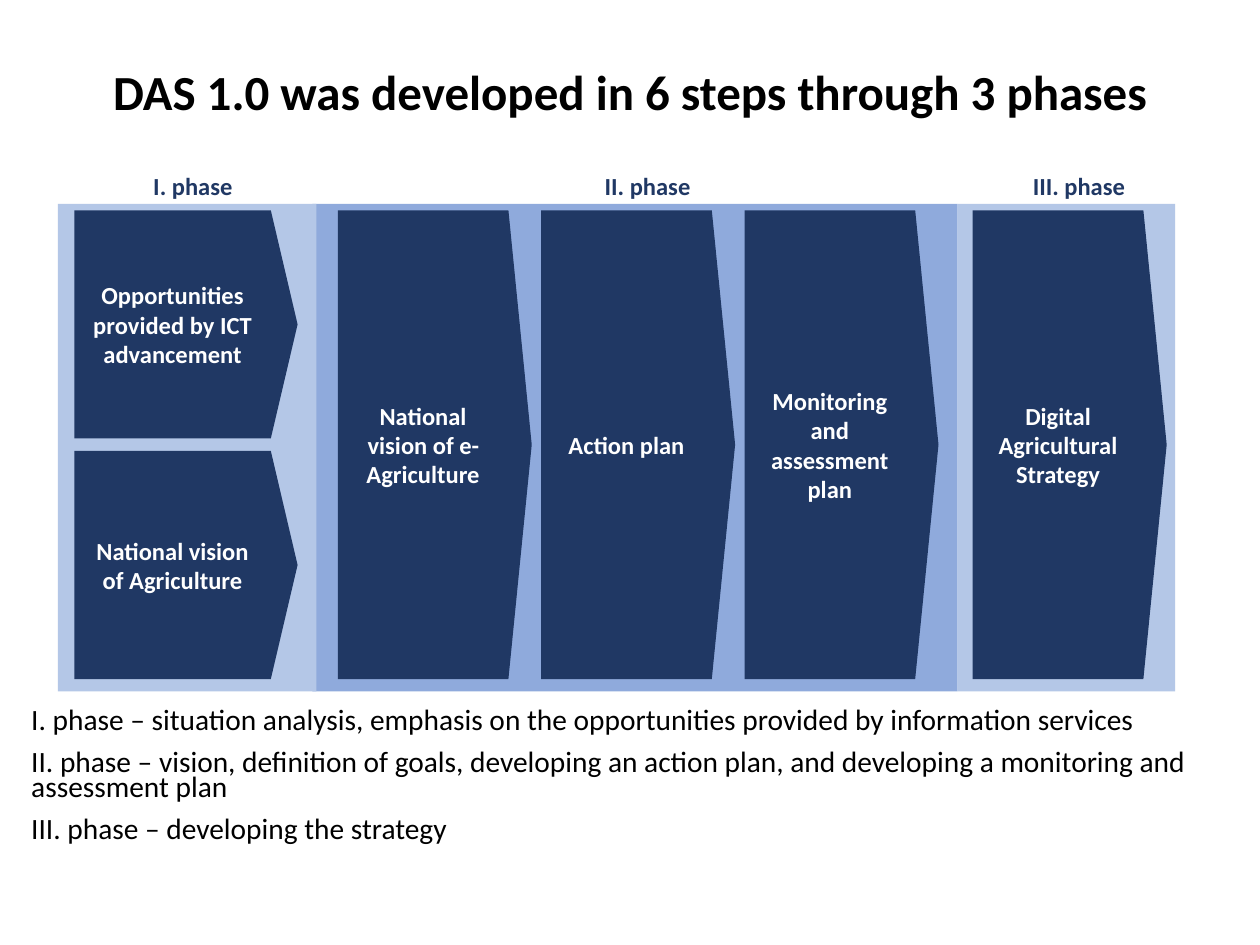
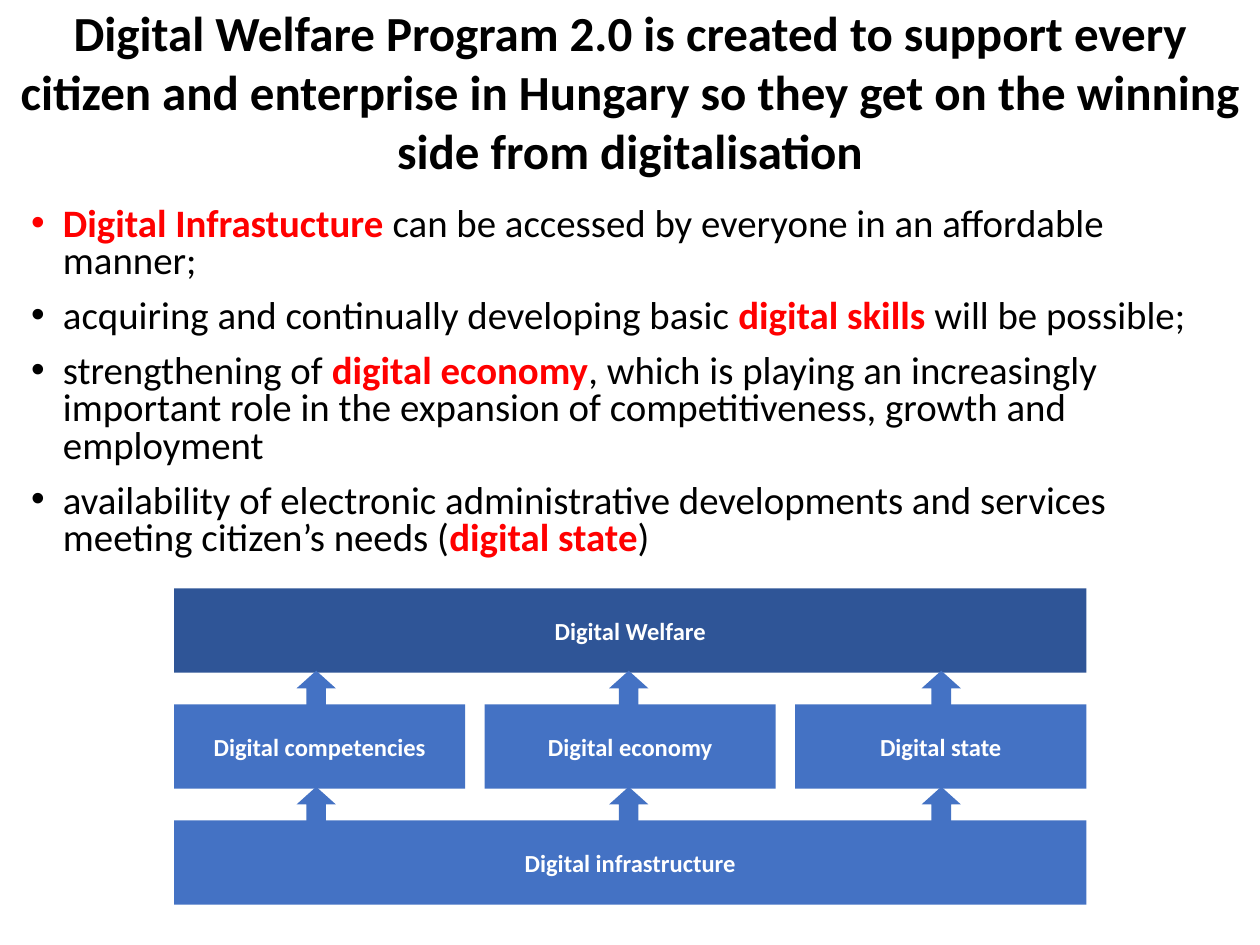
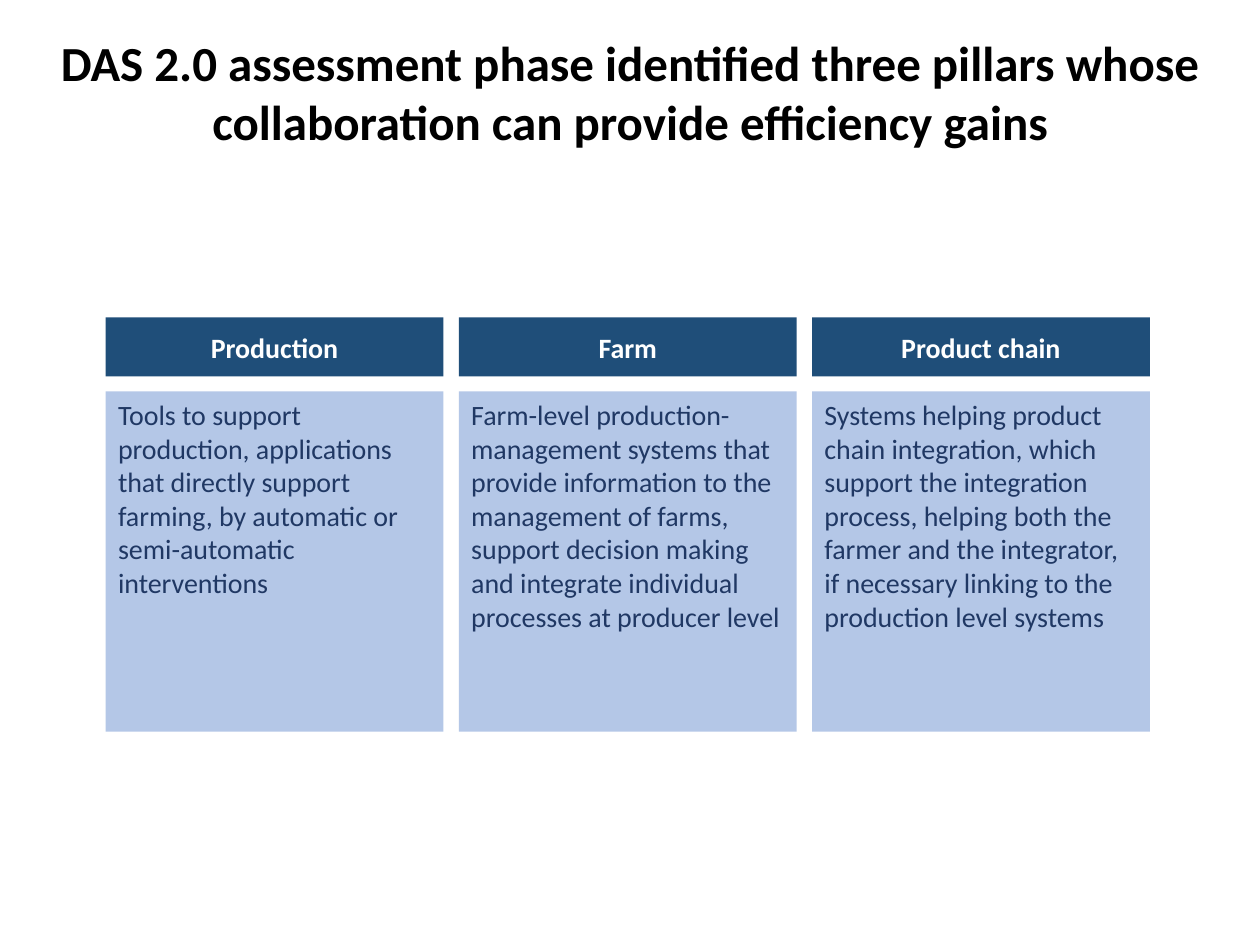
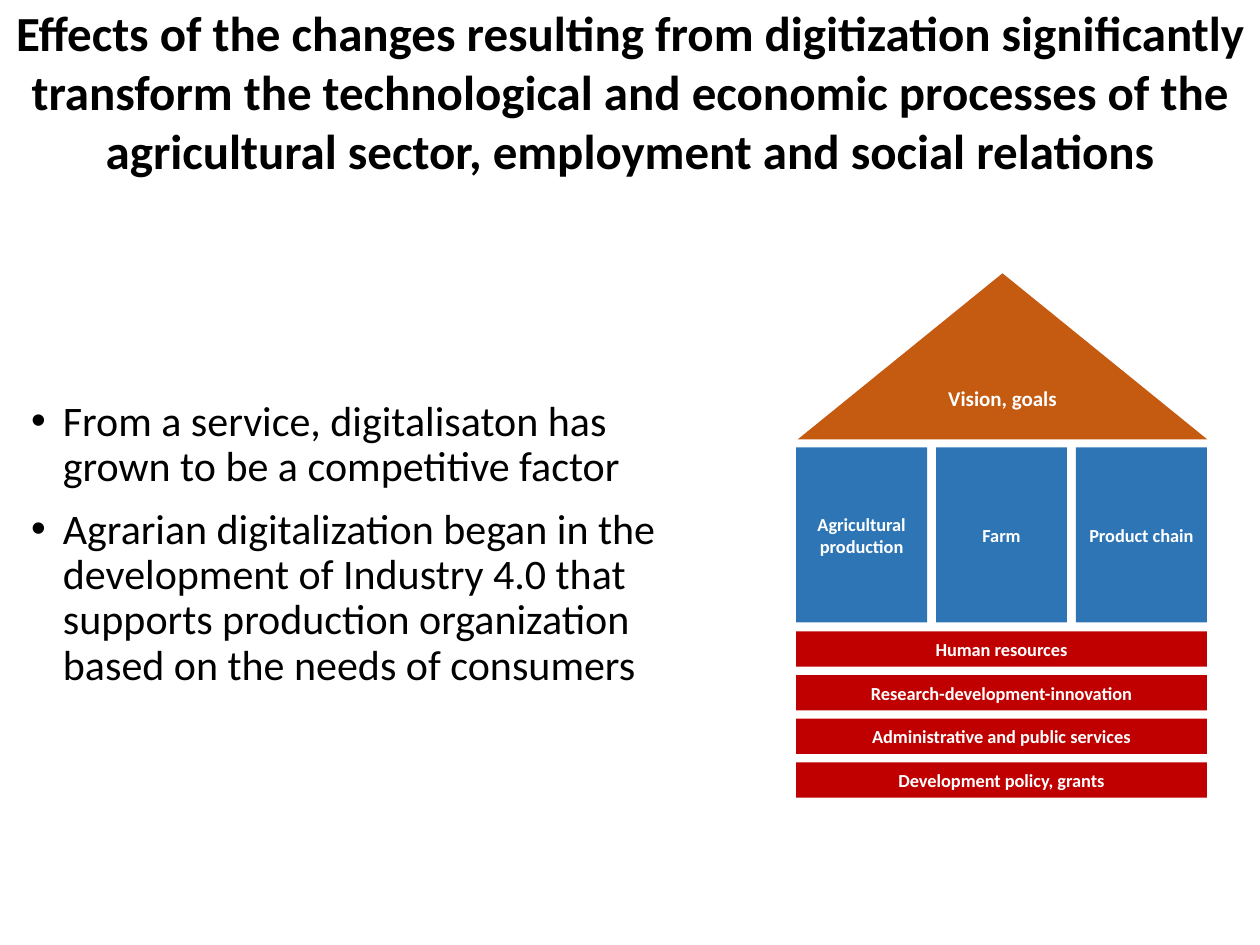
from dataclasses import dataclass
from typing import NamedTuple

from lxml.etree import SubElement
from pptx import Presentation
from pptx.dml.color import RGBColor
from pptx.enum.shapes import MSO_SHAPE as Preset
from pptx.enum.text import MSO_ANCHOR as Anchor, PP_ALIGN as Align
from pptx.oxml.ns import qn
from pptx.shapes.autoshape import Shape
from pptx.slide import Slide
from pptx.text.text import TextFrame
from pptx.util import Cm, Pt


@dataclass(frozen=True)
class Theme:
    font: str = "Calibri"
    black: str = "000000"
    white: str = "FFFFFF"
    highlight: str = "FF0000"
    navy: str = "203864"
    pale_blue: str = "B4C7E7"
    mid_blue: str = "8FAADC"
    royal_blue: str = "2F5597"
    blue: str = "4472C4"
    header_blue: str = "1F4E79"
    pillar_blue: str = "2E75B6"
    base_red: str = "C00000"
    roof_orange: str = "C55A11"
    title_size: float = 28
    service_size: float = 24
    goal_size: float = 22.2
    phase_size: float = 16.8
    card_size: float = 16
    label_size: float = 14
    roof_size: float = 12
    house_size: float = 10.5


THEME = Theme()


class Box(NamedTuple):
    """Left, top, width and height in centimetres."""
    left: float
    top: float
    width: float
    height: float

    def shifted(self, right: float = 0, down: float = 0) -> "Box":
        return self._replace(left=round(self.left + right, 2), top=round(self.top + down, 2))

    def lengths(self) -> list[Cm]:
        return [Cm(value) for value in self]


class TextStyle(NamedTuple):
    size: float
    color: str = THEME.white
    bold: bool = True
    align: Align = Align.CENTER
    anchor: Anchor = Anchor.MIDDLE


class Block(NamedTuple):
    """A filled preset shape with an optional label."""
    box: Box
    fill: str
    text: str = ""
    style: TextStyle = TextStyle(THEME.label_size)
    preset: Preset = Preset.RECTANGLE


class BodyStyle(NamedTuple):
    size: float
    line_spacing: float
    bulleted: bool = True


TITLE_BOX = Box(0.03, 0, 25.34, 3.68)
TITLE_STYLE = TextStyle(THEME.title_size, THEME.black)
CARD_STYLE = TextStyle(THEME.card_size, THEME.navy, False, Align.LEFT, Anchor.TOP)
PHASE_STYLE = TextStyle(THEME.label_size, THEME.navy, True, Align.LEFT, Anchor.TOP)
HOUSE_STYLE = TextStyle(THEME.house_size)


def write_text(frame: TextFrame, text: str, style: TextStyle) -> None:
    frame.text = text
    frame.vertical_anchor = style.anchor
    paragraph = frame.paragraphs[0]
    paragraph.alignment = style.align
    font = paragraph.runs[0].font
    font.name, font.size, font.bold = THEME.font, Pt(style.size), style.bold
    font.color.rgb = RGBColor.from_string(style.color)


def add_block(slide: Slide, block: Block) -> Shape:
    shape = slide.shapes.add_shape(block.preset, *block.box.lengths())
    shape.shadow.inherit = False
    shape.fill.solid()
    shape.fill.fore_color.rgb = RGBColor.from_string(block.fill)
    shape.line.fill.background()
    if block.text:
        shape.text_frame.word_wrap = True
        write_text(shape.text_frame, block.text, block.style)
    return shape


def add_label(slide: Slide, box: Box, text: str, style: TextStyle, wrap: bool) -> None:
    frame = slide.shapes.add_textbox(*box.lengths()).text_frame
    frame.word_wrap = wrap
    write_text(frame, text, style)


def add_body(slide: Slide, box: Box, texts: list[str], style: BodyStyle,
             top_inset: float = 0.13) -> None:
    """Writes one paragraph per text; parts between bars are highlighted."""
    frame = slide.shapes.add_textbox(*box.lengths()).text_frame
    frame.word_wrap = True
    frame.margin_top = Cm(top_inset)
    for index, text in enumerate(texts):
        paragraph = frame.add_paragraph() if index else frame.paragraphs[0]
        paragraph.line_spacing = style.line_spacing
        paragraph.space_before = Pt(10 if index else 0)
        if style.bulleted:
            properties = paragraph._p.get_or_add_pPr()
            properties.set("marL", str(Cm(0.64)))
            properties.set("indent", str(Cm(-0.64)))
            SubElement(properties, qn("a:buFont"), typeface="Arial")
            SubElement(properties, qn("a:buChar"), char="•")
        for position, part in enumerate(text.split("|")):
            if not part:
                continue
            highlighted = position % 2 == 1
            run = paragraph.add_run()
            run.text = part
            run.font.name, run.font.size = THEME.font, Pt(style.size)
            run.font.bold = highlighted
            color = THEME.highlight if highlighted else THEME.black
            run.font.color.rgb = RGBColor.from_string(color)


def add_titled_slide(presentation: Presentation, title: str) -> Slide:
    slide = presentation.slides.add_slide(presentation.slide_layouts[6])
    add_label(slide, TITLE_BOX, title, TITLE_STYLE, wrap=True)
    return slide


def build_phases(presentation: Presentation) -> None:
    slide = add_titled_slide(presentation, "DAS 1.0 was developed in 6 steps through 3 phases")
    add_body(slide, Box(0.38, 14.2, 24.56, 2.97), [
        "I. phase – situation analysis, emphasis on the opportunities provided by "
        "information services",
        "II. phase – vision, definition of goals, developing an action plan, and "
        "developing a monitoring and assessment plan",
        "III. phase – developing the strategy",
    ], BodyStyle(THEME.phase_size, 0.7, bulleted=False))

    for left, width, fill in [(19.3, 4.39, THEME.pale_blue), (6.3, 13, THEME.mid_blue),
                              (1.17, 5.21, THEME.pale_blue)]:
        add_block(slide, Block(Box(left, 4.11, width, 9.83), fill))

    first_input = Box(1.5, 4.24, 4.5, 4.6)
    first_step = Box(6.81, 4.24, 3.91, 9.45)
    steps = [
        (first_input, "Opportunities provided by ICT advancement"),
        (first_input.shifted(down=4.85), "National vision of Agriculture"),
        (first_step, "National vision of e-Agriculture"),
        (first_step.shifted(right=4.1), "Action plan"),
        (first_step.shifted(right=8.2), "Monitoring and assessment plan"),
        (first_step.shifted(right=12.8), "Digital Agricultural Strategy"),
    ]
    for box, text in steps:
        arrow = add_block(slide, Block(box, THEME.navy, text, preset=Preset.RIGHT_ARROW))
        arrow.adjustments[0] = 1
        arrow.adjustments[1] = 0.12

    for left, width, text in [(2.84, 2.11, "I. phase"), (11.94, 2.26, "II. phase"),
                              (20.57, 2.39, "III. phase")]:
        add_label(slide, Box(left, 3.33, width, 0.86), text, PHASE_STYLE, wrap=False)


def build_welfare(presentation: Presentation) -> None:
    slide = add_titled_slide(
        presentation,
        "Digital Welfare Program 2.0 is created to support every citizen and enterprise "
        "in Hungary so they get on the winning side from digitalisation")
    add_body(slide, Box(0.38, 4.06, 24.56, 7.65), [
        "|Digital Infrastucture |can be accessed by everyone in an affordable manner;",
        "acquiring and continually developing basic |digital skills |will be possible;",
        "strengthening of |digital economy|, which is playing an increasingly important "
        "role in the expansion of competitiveness, growth and employment",
        "availability of electronic administrative developments and services meeting "
        "citizen’s needs (|digital state|)",
    ], BodyStyle(THEME.goal_size, 0.8))

    row_pitch = 2.34
    top_bar = Box(3.51, 11.86, 18.39, 1.7)
    add_block(slide, Block(top_bar, THEME.royal_blue, "Digital Welfare"))
    add_block(slide, Block(top_bar.shifted(down=2 * row_pitch), THEME.blue,
                           "Digital infrastructure"))
    first_column = top_bar.shifted(down=row_pitch)._replace(width=5.87)
    first_arrow = Box(6.02, 13.48, 0.71, 0.79)
    for column, text in enumerate(["Digital competencies", "Digital economy", "Digital state"]):
        add_block(slide, Block(first_column.shifted(right=column * 6.26), THEME.blue, text))
        for row in range(2):
            box = first_arrow.shifted(column * 6.3, row * row_pitch)
            arrow = add_block(slide, Block(box, THEME.blue, preset=Preset.RIGHT_ARROW))
            arrow.rotation = 270


def build_pillars(presentation: Presentation) -> None:
    slide = add_titled_slide(
        presentation,
        "DAS 2.0 assessment phase identified three pillars whose collaboration can "
        "provide efficiency gains")
    pillars = [
        ("Production", "Tools to support production, applications that directly support "
         "farming, by automatic or semi-automatic interventions"),
        ("Farm", "Farm-level production-management systems that provide information to "
         "the management of farms, support decision making and integrate individual "
         "processes at producer level"),
        ("Product chain", "Systems helping product chain integration, which support the "
         "integration process, helping both the farmer and the integrator, if necessary "
         "linking to the production level systems"),
    ]
    for column, (heading, description) in enumerate(pillars):
        header = Box(2.13, 6.4, 6.81, 1.19).shifted(right=column * 7.12)
        card = header.shifted(down=1.49)._replace(height=6.86)
        add_block(slide, Block(header, THEME.header_blue, heading, TextStyle(THEME.card_size)))
        add_block(slide, Block(card, THEME.pale_blue, description, CARD_STYLE))


def build_house(presentation: Presentation) -> None:
    slide = add_titled_slide(
        presentation,
        "Effects of the changes resulting from digitization significantly transform the "
        "technological and economic processes of the agricultural sector, employment "
        "and social relations")
    add_body(slide, Box(0.38, 4.06, 13.94, 13), [
        "From a service, digitalisaton has grown to be a competitive factor",
        "Agrarian digitalization began in the development of Industry 4.0 that supports "
        "production organization based on the needs of consumers",
    ], BodyStyle(THEME.service_size, 0.9), top_inset=4)

    pillar = Box(16.05, 9.02, 2.64, 3.53)
    base = Box(16.05, 12.73, 8.28, 0.71)
    blocks = [
        Block(pillar.shifted(right=column * 2.82), THEME.pillar_blue, text, HOUSE_STYLE)
        for column, text in enumerate(["Agricultural production", "Farm", "Product chain"])
    ] + [
        Block(base.shifted(down=row * 0.88), THEME.base_red, text, HOUSE_STYLE)
        for row, text in enumerate(["Human resources", "Research-development-innovation",
                                    "Administrative and public services",
                                    "Development policy, grants"])
    ]
    for block in blocks:
        frame = add_block(slide, block).text_frame
        frame.margin_left = frame.margin_right = Cm(0.08)
    add_block(slide, Block(Box(16.08, 5.51, 8.26, 3.35), THEME.roof_orange, "Vision, goals",
                           TextStyle(THEME.roof_size), Preset.ISOSCELES_TRIANGLE))


def main() -> None:
    presentation = Presentation()
    presentation.slide_width, presentation.slide_height = Cm(25.4), Cm(19.05)
    for build in (build_phases, build_welfare, build_pillars, build_house):
        build(presentation)
    presentation.save("out.pptx")


if __name__ == "__main__":
    main()
